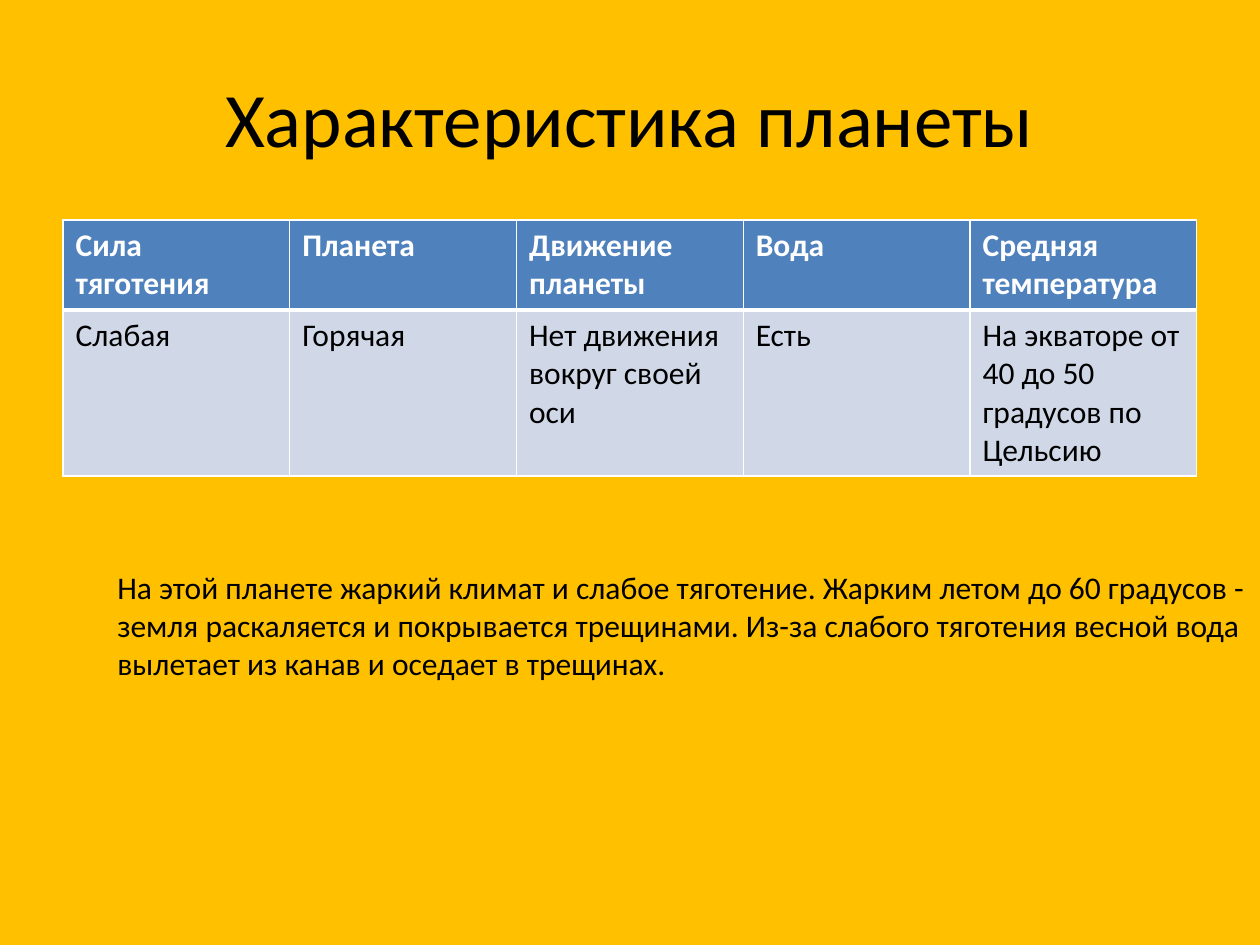
from lxml.etree import SubElement
from pptx import Presentation
from pptx.dml.color import RGBColor
from pptx.enum.text import MSO_ANCHOR, PP_ALIGN
from pptx.oxml.ns import qn
from pptx.util import Pt

PX = 914400 // 126
FONT = "Calibri"
BLACK, WHITE = "000000", "FFFFFF"
ROWS = [
    ["Сила тяготения", "Планета", "Движение планеты", "Вода", "Средняя температура"],
    ["Слабая", "Горячая", "Нет движения вокруг своей оси", "Есть",
     "На экваторе от 40 до 50 градусов по Цельсию"],
]
ROW_HEIGHTS = [90, 166]
ROW_STYLES = [("4F81BD", WHITE, True, 3), ("D0D8E8", BLACK, False, 1)]
NOTE = [
    "На этой планете жаркий климат и слабое тяготение. Жарким летом до 60 градусов -",
    "земля раскаляется и покрывается трещинами. Из-за слабого тяготения весной вода",
    "вылетает из канав и оседает в трещинах.",
]


def px(*lengths):
    return [n * PX for n in lengths]


def paint(fill, color):
    fill.solid()
    fill.fore_color.rgb = RGBColor.from_string(color)


def style(p, size, color, bold=False):
    p.font.name = FONT
    p.font.size = Pt(size)
    p.font.bold = bold
    p.font.color.rgb = RGBColor.from_string(color)


def add_border(cell, side, width):
    tcPr = cell._tc.get_or_add_tcPr()
    ln = SubElement(tcPr, qn(f"a:{side}"), w=str(Pt(width)))
    fill = SubElement(ln, qn("a:solidFill"))
    SubElement(fill, qn("a:srgbClr"), val=WHITE)


def add_title(s, box, text):
    tf = s.shapes.add_textbox(*px(*box)).text_frame
    tf.word_wrap = True
    tf.vertical_anchor = MSO_ANCHOR.MIDDLE
    p = tf.paragraphs[0]
    p.text = text
    p.alignment = PP_ALIGN.CENTER
    style(p, 44, BLACK)


def add_facts(s, box):
    table = s.shapes.add_table(len(ROWS), len(ROWS[0]), *px(*box)).table
    for i, (texts, (fill, color, bold, bottom)) in enumerate(zip(ROWS, ROW_STYLES)):
        table.rows[i].height = ROW_HEIGHTS[i] * PX
        top = ROW_STYLES[i - 1][3] if i else 1
        for j, text in enumerate(texts):
            cell = table.cell(i, j)
            cell.text = text
            style(cell.text_frame.paragraphs[0], 18, color, bold)
            for side, width in (("lnL", 1), ("lnR", 1), ("lnT", top), ("lnB", bottom)):
                add_border(cell, side, width)
            paint(cell.fill, fill)


def add_note(s, box):
    tf = s.shapes.add_textbox(*px(*box)).text_frame
    tf.word_wrap = False
    tf.text = "\n".join(NOTE)
    for p in tf.paragraphs:
        style(p, 18, BLACK)


def main():
    prs = Presentation()
    prs.slide_width, prs.slide_height = px(1260, 945)
    s = prs.slides.add_slide(prs.slide_layouts[6])
    paint(s.background.fill, "FFC000")
    add_title(s, (63, 38, 1134, 157), "Характеристика планеты")
    add_facts(s, (63, 220, 1134, sum(ROW_HEIGHTS)))
    add_note(s, (105, 562, 1159, 127))
    prs.save("out.pptx")


if __name__ == "__main__":
    main()
